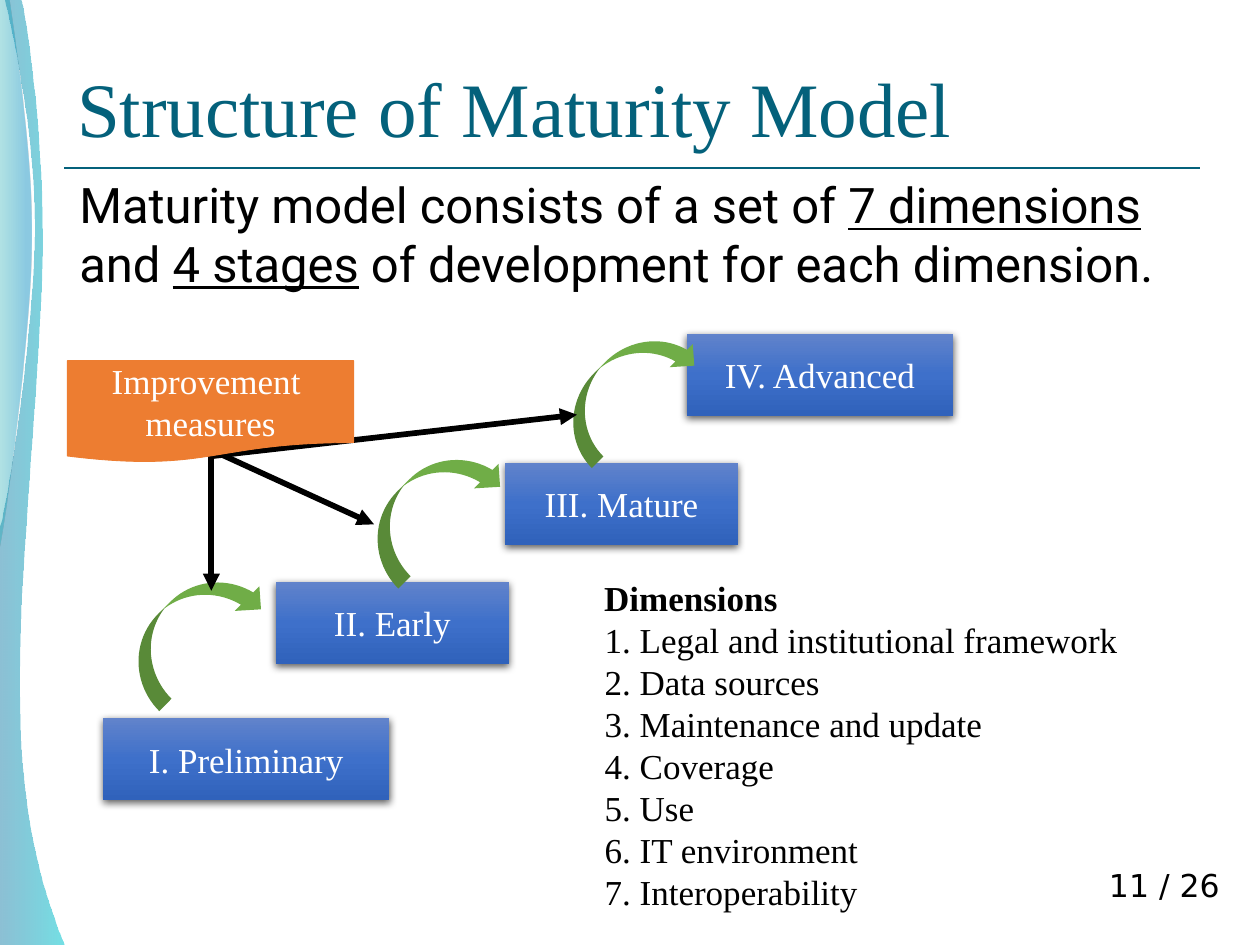
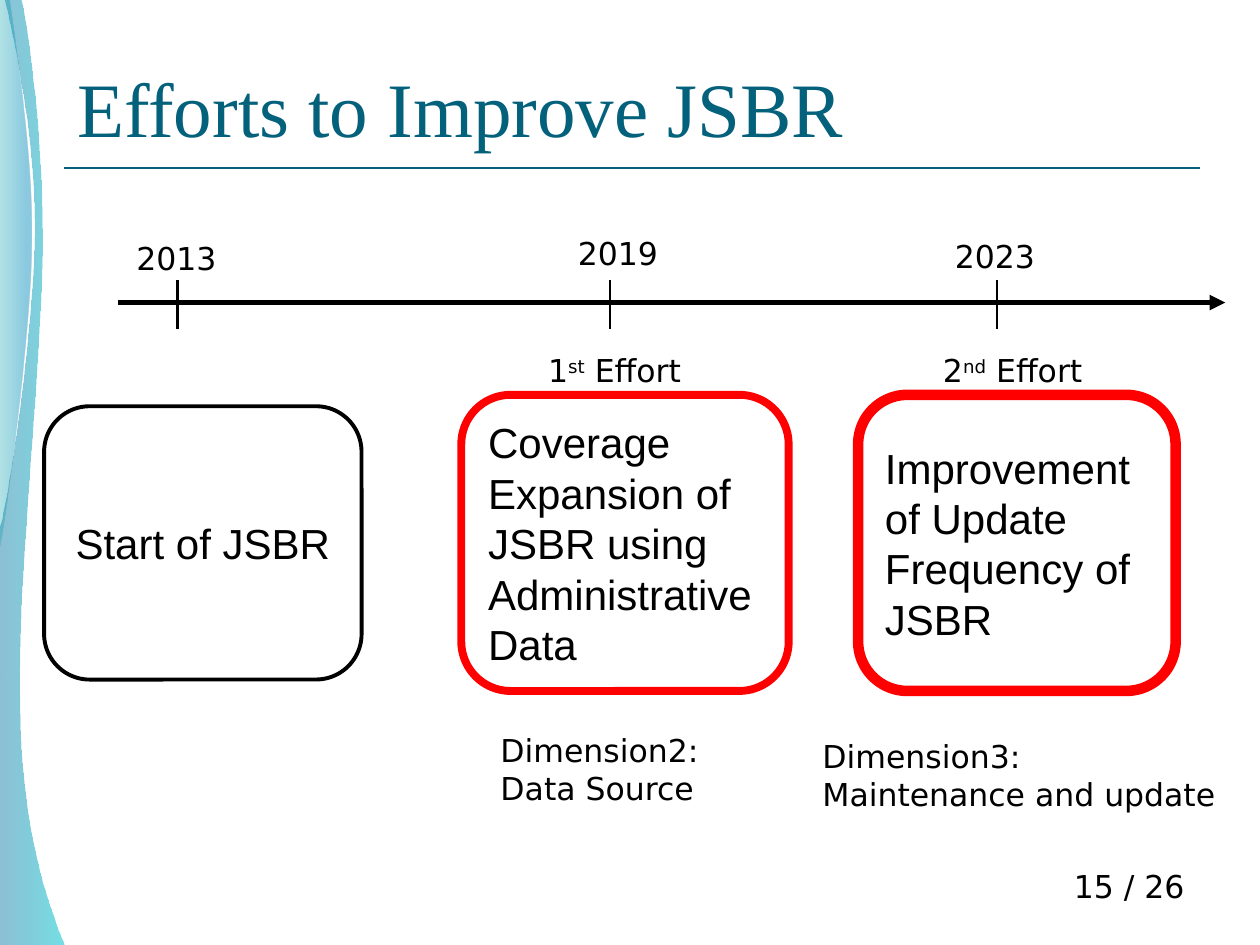
from dataclasses import dataclass

from lxml import etree
from pptx import Presentation
from pptx.dml.color import RGBColor
from pptx.enum import shapes as es, text as et
from pptx.oxml import parse_xml
from pptx.oxml.ns import nsdecls, qn
from pptx.util import Cm, Pt


@dataclass(frozen=True)
class Theme:
    teal: str = "04617B"
    black: str = "000000"
    white: str = "FFFFFF"
    red: str = "FF0000"
    green: str = "70AD47"
    orange: str = "ED7D31"
    stage: tuple = ((0, "6183CB", 100), (50, "3E70CA", 100), (100, "3062BB", 100))
    outer: tuple = ((0, "0074A1", 45), (100, "00C6CF", 55))
    inner: tuple = ((0, "00A1A9", 30), (80, "008BBF", 45))
    serif: str = "Times New Roman"
    sans: str = "Arial"
    lead: str = "Roboto"
    plain: str = "DejaVu Sans"
    head: int = 44
    big: int = 28
    mid: int = 24
    body: int = 20
    small: int = 18


T = Theme()
KIND = es.MSO_SHAPE

# All lengths are in centimetres.
RULE = (1.3, 3.39, 24.2, 3.39)
TITLE = (1.3, 0.05, 22.86, 3.16)
# Each wave is a list of steps: two numbers draw a line, six a Bézier curve.
WAVES = [
    (T.outer, [(0, 19.05), (0, 10.67), (0.2, 9.98, 0.71, 6.4, 0.71, 4.6),
               (0.71, 2.79, 0.3, 0.79, 0.1, 0), (0.43, 0),
               (0.51, 0.3, 0.86, 2.46, 0.86, 4.83),
               (0.86, 7.19, 0.33, 11.79, 0.41, 14.15),
               (0.41, 16.59, 0.94, 18.19, 1.3, 19.05)]),
    (T.inner, [(0, 11.1), (0.13, 10.46, 0.61, 6.78, 0.63, 4.93),
               (0.66, 3.07, 0.3, 0.81, 0.2, 0), (0, 0)]),
]

LEAD = [[("Maturity model consists of a set of ", ""), ("7 dimensions", "u"),
         (" and ", ""), ("4 stages", "u"),
         (" of development for each dimension.", "")]]
STAGES = [("I. Preliminary", 2.08, 14.48, 5.77), ("II. Early", 5.56, 11.73, 4.7),
          ("III. Mature", 10.18, 9.33, 4.7), ("IV. Advanced", 13.84, 6.73, 5.38)]
STEPS = [(2.24, 11.99, 3.25, 1.4), (7.06, 9.52, 3.25, 1.4), (10.99, 7.16, 3.25, 1.32)]
LINKS = [(4.26, 9.07, 7.54, 10.57), (4.24, 9.2, 11.63, 8.36), (4.26, 9.07, 4.26, 11.91)]
DIMS = ["Legal and institutional framework", "Data sources", "Maintenance and update",
        "Coverage", "Use", "IT environment", "Interoperability"]

AXIS = (2.37, 6.1, 24.7, 6.1)
YEARS = [("2013", 2.5, 4.7, 3.58), ("2019", 11.4, 4.6, 12.3), ("2023", 19, 4.65, 20.1)]
EVENTS = [
    ("Start of JSBR", (0.89, 8.19, 6.4, 5.51), T.black, 2.25, "c"),
    ("Coverage Expansion of JSBR using Administrative Data",
     (9.3, 7.96, 6.6, 5.97), T.red, 4.5, "l"),
    ("Improvement of Update Frequency of JSBR",
     (17.3, 7.96, 6.4, 5.97), T.red, 6, "l"),
]
EFFORTS = [("1", "st", 10.8), ("2", "nd", 18.76)]
NOTES = [(["Dimension2:", "Data Source"], (9.84, 14.61, 4.93, 1.8)),
         (["Dimension3:", "Maintenance and update"], (16.33, 14.74, 8.66, 1.8))]

ALIGN = {"l": et.PP_ALIGN.LEFT, "c": et.PP_ALIGN.CENTER, "r": et.PP_ALIGN.RIGHT}


def rgb(hue):
    return RGBColor.from_string(hue)


def cms(nums):
    return [Cm(n) for n in nums]


def write(frame, paras, font=T.plain, size=T.small, hue=T.black, align="l",
          anchor=et.MSO_ANCHOR.TOP, wrap=True):
    """Fill a frame; a paragraph is a string or a list of (text, mark) runs.

    Marks: u underline, b bold, s superscript.
    """
    frame.word_wrap = wrap
    frame.vertical_anchor = anchor
    for i, para in enumerate(paras):
        p = frame.paragraphs[0] if i == 0 else frame.add_paragraph()
        p.alignment = ALIGN[align]
        for words, mark in [(para, "")] if isinstance(para, str) else para:
            run = p.add_run()
            run.text = words
            run.font.name, run.font.size = font, Pt(size)
            run.font.color.rgb = rgb(hue)
            if mark == "u":
                run.font.underline = True
            elif mark == "b":
                run.font.bold = True
            elif mark == "s":
                run._r.get_or_add_rPr().set("baseline", "30000")


def label(slide, paras, spot, **fmt):
    box = slide.shapes.add_textbox(*cms(spot))
    write(box.text_frame, paras, **fmt)
    return box


def shade(shape, stops):
    """Give a shape a downward gradient of (place, colour, opacity) stops."""
    marks = "".join(
        f'<a:gs pos="{at * 1000}"><a:srgbClr val="{hue}">'
        f'<a:alpha val="{seen * 1000}"/></a:srgbClr></a:gs>' for at, hue, seen in stops)
    shape.fill.background()
    props = shape.element.spPr
    props.replace(props.find(qn("a:noFill")), parse_xml(
        f'<a:gradFill rotWithShape="1" {nsdecls("a")}><a:gsLst>{marks}</a:gsLst>'
        f'<a:lin ang="5400000" scaled="0"/></a:gradFill>'))


def outline(shape, hue=None, width=1):
    if hue:
        shape.line.color.rgb, shape.line.width = rgb(hue), Pt(width)
    else:
        shape.line.fill.background()


def block(slide, kind, spot, fill=None, line=None, width=1):
    shape = slide.shapes.add_shape(kind, *cms(spot))
    shape.shadow.inherit = False
    if fill:
        shape.fill.solid()
        shape.fill.fore_color.rgb = rgb(fill)
    else:
        shape.fill.background()
    outline(shape, line, width)
    return shape


def cast(shape):
    """Add a soft shadow below a shape."""
    shape.element.spPr.find(qn("a:effectLst")).append(parse_xml(
        f'<a:outerShdw blurRad="57150" dist="19050" dir="5400000" algn="ctr" '
        f'rotWithShape="0" {nsdecls("a")}><a:srgbClr val="{T.black}">'
        f'<a:alpha val="63000"/></a:srgbClr></a:outerShdw>'))


def link(slide, ends, hue=T.black, width=1.5, arrow=False):
    line = slide.shapes.add_connector(es.MSO_CONNECTOR.STRAIGHT, *cms(ends))
    outline(line, hue, width)
    props = line.element.spPr
    if arrow:
        etree.SubElement(props.find(qn("a:ln")), qn("a:tailEnd"), type="triangle")
    etree.SubElement(props, qn("a:effectLst"))
    return line


def ribbon(slide, stops, steps):
    """Draw a wave lying on its side, then turn it upright."""
    tall = max(step[-1] for step in steps)
    turned = [[cms((tall - y, x)) for x, y in zip(step[::2], step[1::2])]
              for step in steps]
    pen = slide.shapes.build_freeform(*turned[0][-1])
    pen.add_line_segments([pts[-1] for pts in turned[1:]], close=True)
    wave = pen.convert_to_shape()
    for seg, pts in zip(list(wave.element.iter(qn("a:lnTo"))), turned[1:]):
        if len(pts) == 3:
            curve = etree.Element(qn("a:cubicBezTo"))
            for x, y in pts:
                etree.SubElement(curve, qn("a:pt"), x=str(int(x)), y=str(int(y)))
            seg.getparent().replace(seg, curve)
    shift = (wave.width - wave.height) // 2
    wave.left, wave.top, wave.rotation = -shift, shift, 270
    wave.shadow.inherit = False
    outline(wave)
    shade(wave, stops)
    return wave


def dress(layout, slide):
    """Draw the rule and the waves, then hand them to the layout."""
    marks = [link(slide, RULE, T.teal)]
    marks += [ribbon(slide, *wave) for wave in WAVES]
    for i, mark in enumerate(marks):
        layout.shapes.element.insert(2 + i, mark.element)


def start(deck, title, page, spot):
    slide = deck.slides.add_slide(deck.slide_layouts[5])
    head = slide.shapes.title
    head.left, head.top, head.width, head.height = cms(TITLE)
    write(head.text_frame, [title], font=T.serif, size=T.head, hue=T.teal,
          anchor=et.MSO_ANCHOR.BOTTOM)
    head.text_frame.auto_size = et.MSO_AUTO_SIZE.NONE
    label(slide, [f"{page} / 26"], (*spot, 5.92, 1.27), align="r")
    return slide


def number(box):
    """Indent the heading and number the paragraphs after it."""
    for i, p in enumerate(box.text_frame.paragraphs):
        props = p._p.get_or_add_pPr()
        props.set("marL", str(Cm(0.97 if i else 0.76)))
        props.set("indent", str(Cm(-0.2 if i else 0)))
        if i:
            etree.SubElement(props, qn("a:buFont"), typeface=T.serif)
            etree.SubElement(props, qn("a:buAutoNum"), type="arabicPeriod")


def model(slide):
    white = dict(font=T.serif, size=T.body, hue=T.white, align="c",
                 anchor=et.MSO_ANCHOR.MIDDLE)
    for name, x, y, wide in STAGES:
        box = block(slide, KIND.RECTANGLE, (x, y, wide, 1.65))
        shade(box, T.stage)
        cast(box)
        write(box.text_frame, [name], **white)
    for spot in STEPS:
        block(slide, KIND.CURVED_DOWN_ARROW, spot, T.green).rotation = 315
    for ends in LINKS:
        link(slide, ends, width=3.25, arrow=True)
    doc = block(slide, KIND.FLOWCHART_DOCUMENT, (1.36, 7.27, 5.77, 2.06),
                T.orange, T.orange, 0.5)
    write(doc.text_frame, ["Improvement ", "measures"], **white)
    label(slide, LEAD, (1.35, 3.4, 23.55, 2.64), font=T.lead, size=T.big)
    dims = label(slide, [[("Dimensions", "b")]] + [f" {d}" for d in DIMS],
                 (11.17, 11.5, 16.1, 8.92), font=T.serif, size=T.body)
    dims.text_frame.margin_bottom = 0
    number(dims)


def efforts(slide):
    link(slide, AXIS, width=3, arrow=True)
    for year, x, y, tick in YEARS:
        link(slide, (tick, 5.64, tick, 6.64))
        label(slide, [year], (x, y, 4.19, 1.02))
    for words, spot, hue, width, align in EVENTS:
        box = block(slide, KIND.ROUNDED_RECTANGLE, spot, line=hue, width=width)
        write(box.text_frame, [words], font=T.sans, size=T.mid, align=align,
              anchor=et.MSO_ANCHOR.MIDDLE)
    for rank, tail, x in EFFORTS:
        label(slide, [[(rank, ""), (tail, "s"), (" Effort", "")]], (x, 6.96, 5.41, 1.02))
    for lines, spot in NOTES:
        label(slide, lines, spot, wrap=False)


def main():
    deck = Presentation()
    deck.slide_width, deck.slide_height = cms((25.4, 19.05))
    first = start(deck, "Structure of Maturity Model", 11, (18.92, 17.33))
    dress(first.slide_layout, first)
    model(first)
    efforts(start(deck, "Efforts to Improve JSBR", 15, (18.21, 17.35)))
    deck.save("out.pptx")


if __name__ == "__main__":
    main()
